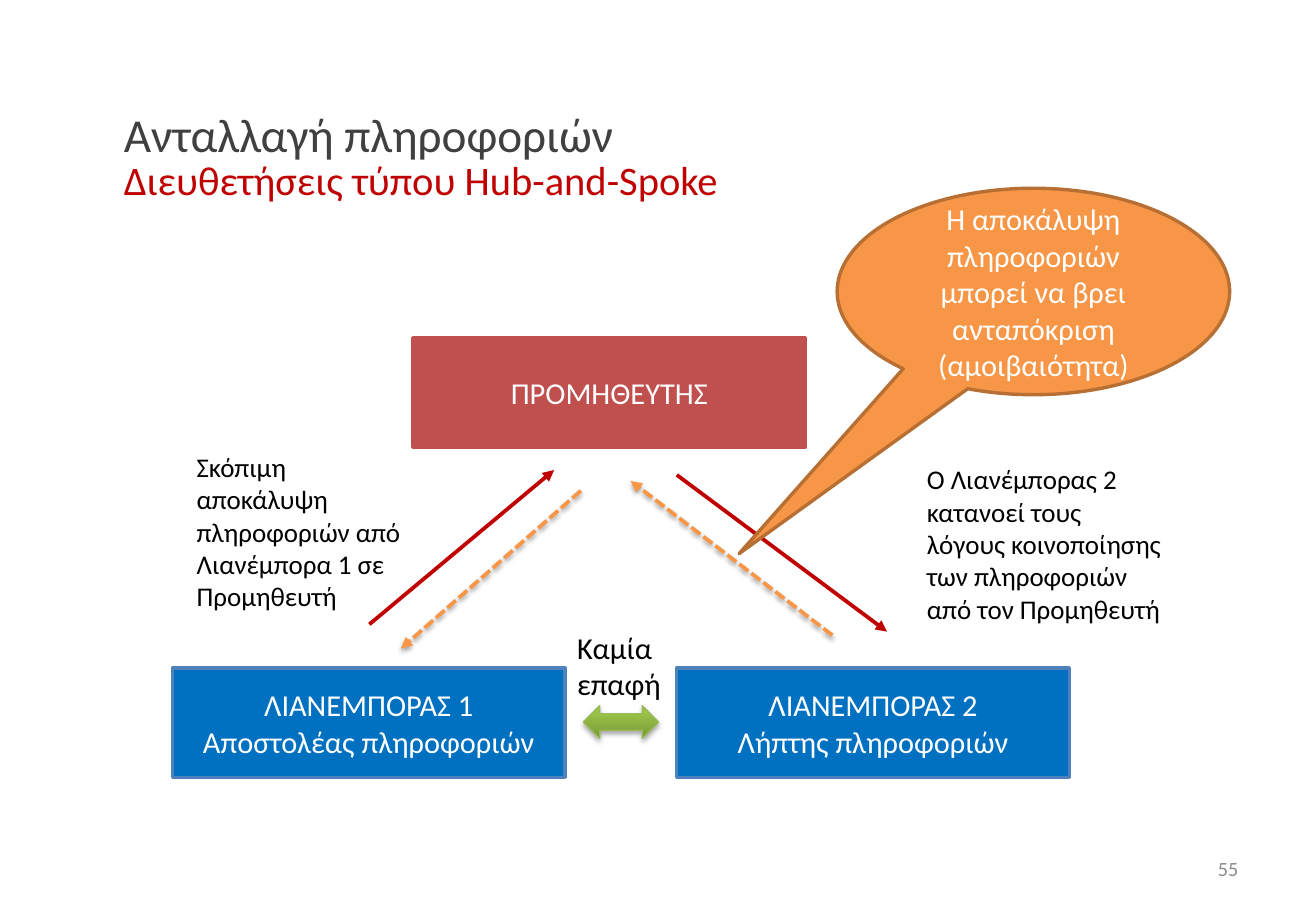
from lxml import etree
from pptx import Presentation
from pptx.dml.color import RGBColor
from pptx.enum.dml import MSO_LINE
from pptx.enum.shapes import MSO_CONNECTOR, MSO_SHAPE
from pptx.enum.text import MSO_ANCHOR, PP_ALIGN
from pptx.oxml.ns import qn
from pptx.util import Pt

PX = 9144
FONT = "Calibri"
STRAIGHT = MSO_CONNECTOR.STRAIGHT
DASH = MSO_LINE.SQUARE_DOT
RECTANGLE = MSO_SHAPE.RECTANGLE
CALLOUT = MSO_SHAPE.OVAL_CALLOUT
DOUBLE_ARROW = MSO_SHAPE.LEFT_RIGHT_ARROW
TOP, MIDDLE = MSO_ANCHOR.TOP, MSO_ANCHOR.MIDDLE
LEFT, CENTER, RIGHT = PP_ALIGN.LEFT, PP_ALIGN.CENTER, PP_ALIGN.RIGHT

BLACK = RGBColor(0x00, 0x00, 0x00)
WHITE = RGBColor(0xFF, 0xFF, 0xFF)
TITLE_GRAY = RGBColor(0x40, 0x40, 0x40)
NUMBER_GRAY = RGBColor(0x8C, 0x8C, 0x8C)
DARK_RED = RGBColor(0xC0, 0x00, 0x00)
SUPPLIER_RED = RGBColor(0xC0, 0x50, 0x4D)
RETAILER_BLUE = RGBColor(0x00, 0x70, 0xC0)
RETAILER_EDGE = RGBColor(0x4F, 0x81, 0xBD)
ORANGE = RGBColor(0xF7, 0x96, 0x46)
ORANGE_EDGE = RGBColor(0xB7, 0x6F, 0x34)
GREEN_DARK = RGBColor(0x77, 0x97, 0x37)
GREEN_LIGHT = RGBColor(0x9B, 0xC3, 0x48)
GREEN_EDGE = RGBColor(0x98, 0xB9, 0x55)

BOX_WIDTH, BOX_HEIGHT = 323, 90
RETAILER_TOP = 550


def emu(*lengths):
    """Turn px lengths into EMU."""
    return [length * PX for length in lengths]


def set_effects(shape, opacity=0, distance=0):
    """Give a shape a soft downward shadow, or none when opacity is 0."""
    effects = etree.SubElement(shape._element.spPr, qn("a:effectLst"))
    if opacity:
        shadow = etree.SubElement(
            effects, qn("a:outerShdw"), blurRad=str(Pt(3.1)),
            dist=str(Pt(distance)), dir="5400000", rotWithShape="0")
        color = etree.SubElement(shadow, qn("a:srgbClr"), val=str(BLACK))
        etree.SubElement(color, qn("a:alpha"), val=str(opacity * 1000))


def add_run(paragraph, text, size, color):
    """Add one formatted run to a paragraph."""
    run = paragraph.add_run()
    run.text = text
    run.font.name = FONT
    run.font.size = Pt(size)
    run.font.color.rgb = color


def fill_text(shape, lines, size, color, align, anchor):
    """Write one paragraph per line into a shape."""
    frame = shape.text_frame
    frame.word_wrap = True
    frame.vertical_anchor = anchor
    for index, line in enumerate(lines):
        paragraph = frame.add_paragraph() if index else frame.paragraphs[0]
        paragraph.alignment = align
        add_run(paragraph, line, size, color)


def add_title(slide, heading, subheading):
    """Add the two-line title."""
    box = slide.shapes.add_textbox(*emu(92, 85, 958, 96))
    fill_text(box, [heading], 28, TITLE_GRAY, LEFT, MIDDLE)
    paragraph = box.text_frame.paragraphs[0]
    paragraph.line_spacing = Pt(25)
    paragraph.add_line_break()
    add_run(paragraph, subheading, 24, DARK_RED)


def add_label(slide, place, text, size, color=BLACK, align=LEFT, anchor=TOP):
    """Add a plain text label."""
    box = slide.shapes.add_textbox(*emu(*place))
    fill_text(box, [text], size, color, align, anchor)


def add_box(slide, kind, place, lines, fill, edge):
    """Add a filled shape with centred white text."""
    shape = slide.shapes.add_shape(kind, *emu(*place))
    shape.shadow.inherit = False
    shape.fill.solid()
    shape.fill.fore_color.rgb = fill
    shape.line.color.rgb = edge
    shape.line.width = Pt(2)
    fill_text(shape, lines, 18, WHITE, CENTER, MIDDLE)
    return shape


def add_arrow(slide, start, end, color, dashed=False):
    """Add an arrow; a dashed one casts a shadow."""
    arrow = slide.shapes.add_connector(STRAIGHT, *emu(*start, *end))
    arrow.line.color.rgb = color
    arrow.line.width = Pt(2.25)
    if dashed:
        arrow.line.dash_style = DASH
    etree.SubElement(arrow.line._get_or_add_ln(), qn("a:tailEnd"), type="triangle")
    set_effects(arrow, 38 if dashed else 0, 1.6)


def add_contact_arrow(slide):
    """Add the green double arrow between the retailers."""
    shape = slide.shapes.add_shape(DOUBLE_ARROW, *emu(480, 581, 62, 27))
    shape.fill.gradient()
    shape.fill.gradient_angle = 90
    dark, light = shape.fill.gradient_stops
    dark.color.rgb, dark.position = GREEN_DARK, 0
    light.color.rgb, light.position = GREEN_LIGHT, 0.8
    shape.line.color.rgb = GREEN_EDGE
    shape.line.width = Pt(0.75)
    set_effects(shape, 35, 1.8)


def main():
    """Build the hub-and-spoke slide."""
    presentation = Presentation()
    presentation.slide_width, presentation.slide_height = emu(1083, 750)
    slide = presentation.slides.add_slide(presentation.slide_layouts[6])

    add_title(slide, "Ανταλλαγή πληροφοριών", "Διευθετήσεις τύπου Hub-and-Spoke")
    add_box(slide, RECTANGLE, (340, 278, BOX_WIDTH, BOX_HEIGHT),
            ["ΠΡΟΜΗΘΕΥΤΗΣ"], SUPPLIER_RED, SUPPLIER_RED)
    for left, lines in (
        (557, ["ΛΙΑΝΕΜΠΟΡΑΣ 2", "Λήπτης πληροφοριών"]),
        (142, ["ΛΙΑΝΕΜΠΟΡΑΣ 1", "Αποστολέας πληροφοριών"]),
    ):
        add_box(slide, RECTANGLE, (left, RETAILER_TOP, BOX_WIDTH, BOX_HEIGHT),
                lines, RETAILER_BLUE, RETAILER_EDGE)

    add_arrow(slide, (478, 404), (330, 534), ORANGE, dashed=True)
    add_arrow(slide, (304, 514), (456, 387), DARK_RED)
    add_arrow(slide, (557, 391), (730, 520), DARK_RED)
    add_arrow(slide, (685, 523), (519, 396), ORANGE, dashed=True)
    add_contact_arrow(slide)

    add_label(slide, (465, 513, 128, 71), "Καμία επαφή", 18)
    add_label(slide, (152, 366, 194, 145),
              "Σκόπιμη αποκάλυψη πληροφοριών από Λιανέμπορα 1 σε Προμηθευτή", 16)
    add_label(slide, (753, 376, 215, 145),
              "Ο Λιανέμπορας 2 κατανοεί τους λόγους κοινοποίησης "
              "των πληροφοριών από τον Προμηθευτή", 16)

    callout = add_box(
        slide, CALLOUT, (689, 155, BOX_WIDTH, 170),
        ["Η αποκάλυψη πληροφοριών μπορεί να βρει ανταπόκριση (αμοιβαιότητα)"],
        ORANGE, ORANGE_EDGE)
    callout.adjustments[0] = -0.75
    callout.adjustments[1] = 1.27
    add_label(slide, (776, 695, 253, 40), "55", 12, NUMBER_GRAY, RIGHT, MIDDLE)

    presentation.save("out.pptx")


if __name__ == "__main__":
    main()
